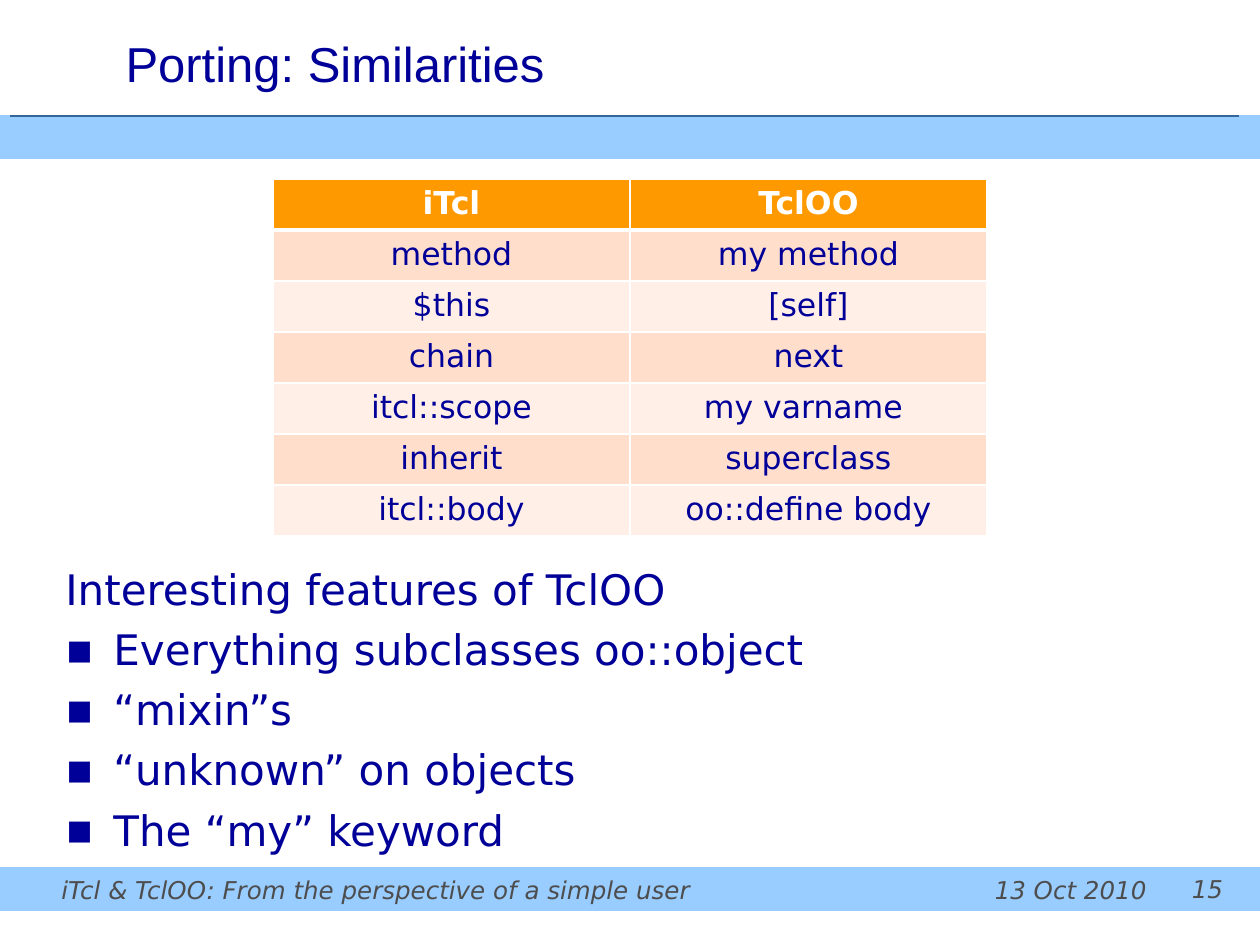
from lxml import etree
from pptx import Presentation
from pptx.dml.color import RGBColor
from pptx.enum.shapes import MSO_CONNECTOR, MSO_SHAPE
from pptx.enum.text import MSO_ANCHOR, PP_ALIGN
from pptx.oxml.ns import qn
from pptx.util import Emu, Pt

LEFT, CENTER, RIGHT = PP_ALIGN.LEFT, PP_ALIGN.CENTER, PP_ALIGN.RIGHT
MIDDLE = MSO_ANCHOR.MIDDLE
RECTANGLE = MSO_SHAPE.RECTANGLE
STRAIGHT = MSO_CONNECTOR.STRAIGHT

NAVY = RGBColor(0x00, 0x00, 0x99)
SKY = RGBColor(0x99, 0xCC, 0xFF)
STEEL = RGBColor(0x33, 0x66, 0x99)
GRAY = RGBColor(0x4D, 0x4D, 0x4D)
WHITE = RGBColor(0xFF, 0xFF, 0xFF)
ORANGE = RGBColor(0xFF, 0x99, 0x00)
PEACH = RGBColor(0xFF, 0xDE, 0xCC)
PALE_PEACH = RGBColor(0xFF, 0xEF, 0xE7)

TITLE_FONT = "Arial"
BODY_FONT = "DejaVu Sans"
PX_PER_INCH = 126
PAGE_WIDTH, PAGE_HEIGHT = 1260, 945

EQUIVALENTS = [
    ("iTcl", "TclOO"),
    ("method", "my method"),
    ("$this", "[self]"),
    ("chain", "next"),
    ("itcl::scope", "my varname "),
    ("inherit", "superclass"),
    ("itcl::body", "oo::define body"),
]
FEATURES_HEADING = "Interesting features of TclOO"
FEATURES = [
    "Everything subclasses oo::object",
    "“mixin”s",
    "“unknown” on objects",
    "The “my” keyword",
]
FOOTERS = [
    ("iTcl & TclOO: From the perspective of a simple user", 49, 869, 950, LEFT),
    ("13 Oct 2010", 976, 869, 183, RIGHT),
    ("15", 1176, 868, 63, CENTER),
]


def px(count):
    return Emu(round(count * 914400 / PX_PER_INCH))


def style(para, size, color, align=LEFT, name=BODY_FONT, bold=False, italic=False):
    para.alignment = align
    font = para.font
    font.name, font.size = name, Pt(size)
    font.bold, font.italic = bold, italic
    font.color.rgb = color


def add_band(page, top):
    band = page.shapes.add_shape(RECTANGLE, 0, px(top), px(PAGE_WIDTH), px(42))
    band.shadow.inherit = False
    band.fill.solid()
    band.fill.fore_color.rgb = SKY
    band.line.color.rgb = SKY
    band.line.width = Pt(0.75)


def add_rule(page, left, right, top):
    rule = page.shapes.add_connector(STRAIGHT, px(left), px(top), px(right), px(top))
    rule.line.color.rgb = STEEL
    rule.line.width = Pt(0.75)
    etree.SubElement(rule._element.spPr, qn("a:effectLst"))


def set_title(page, text):
    title = page.shapes.title
    title.left, title.top, title.width, title.height = px(113), px(10), px(1125), px(105)
    title.text_frame.text = text
    title.text_frame.vertical_anchor = MIDDLE
    style(title.text_frame.paragraphs[0], 28, NAVY, name=TITLE_FONT)


def add_text_box(page, left, top, width, height):
    box = page.shapes.add_textbox(px(left), px(top), px(width), px(height))
    box.text_frame.word_wrap = True
    return box.text_frame


def set_borders(cell, top, bottom):
    """Draw white cell edges; top and bottom are widths in points."""
    properties = cell._tc.get_or_add_tcPr()
    for side, width in (("L", 1), ("R", 1), ("T", top), ("B", bottom)):
        edge = etree.SubElement(properties, qn(f"a:ln{side}"), w=str(Pt(width)))
        fill = etree.SubElement(edge, qn("a:solidFill"))
        etree.SubElement(fill, qn("a:srgbClr"), val=str(WHITE))


def add_equivalents_table(page):
    row_height, column_width = 51, 357
    row_count, column_count = len(EQUIVALENTS), len(EQUIVALENTS[0])
    width = column_count * column_width
    table = page.shapes.add_table(
        row_count, column_count, px((PAGE_WIDTH - width) // 2), px(179),
        px(width), px(row_count * row_height)).table
    table.horz_banding = False
    for row, words in enumerate(EQUIVALENTS):
        header = row == 0
        color = ORANGE if header else (PALE_PEACH, PEACH)[row % 2]
        for column, word in enumerate(words):
            cell = table.cell(row, column)
            set_borders(cell, 3 if row == 1 else 1, 3 if header else 1)
            cell.fill.solid()
            cell.fill.fore_color.rgb = color
            cell.text = word
            style(cell.text_frame.paragraphs[0], 18, WHITE if header else NAVY,
                  CENTER, bold=header)


def add_bullet(para):
    properties = para._p.get_or_add_pPr()
    properties.set("marL", str(px(48)))
    properties.set("indent", str(-px(48)))
    etree.SubElement(properties, qn("a:buFont"), typeface=BODY_FONT)
    etree.SubElement(properties, qn("a:buChar"), char="▪")


def add_features(page):
    frame = add_text_box(page, 53, 557, 1155, 284)
    heading = frame.paragraphs[0]
    heading.text = FEATURES_HEADING
    style(heading, 24, NAVY)
    for feature in FEATURES:
        para = frame.add_paragraph()
        para.text = feature
        add_bullet(para)
        para.space_before = Pt(5.6)
        style(para, 24, NAVY)


def add_footer(page, text, left, top, width, align):
    para = add_text_box(page, left, top, width, 42).paragraphs[0]
    para.text = text
    style(para, 14, GRAY, align, italic=True)


def main():
    deck = Presentation()
    deck.slide_width, deck.slide_height = px(PAGE_WIDTH), px(PAGE_HEIGHT)
    page = deck.slides.add_slide(deck.slide_layouts[5])
    for top in (868, 116):
        add_band(page, top)
    add_rule(page, 10, 1239, 116)
    set_title(page, "Porting: Similarities")
    add_equivalents_table(page)
    add_features(page)
    for footer in FOOTERS:
        add_footer(page, *footer)
    deck.save("out.pptx")


if __name__ == "__main__":
    main()
